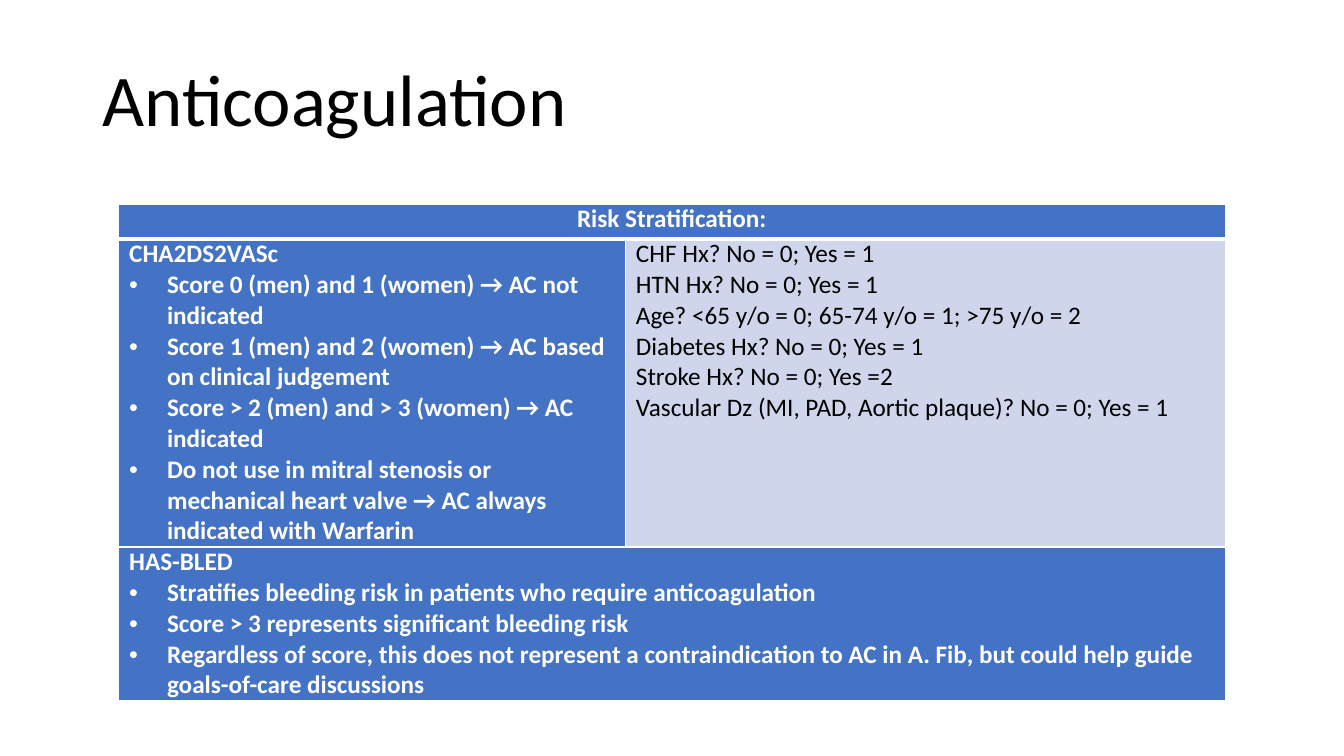
from lxml import etree
from pptx import Presentation
from pptx import util as u
from pptx.dml.color import RGBColor
from pptx.enum import text
from pptx.oxml.ns import qn

Pt = u.Pt
FONT = "Calibri"
WHITE, BLACK, BLUE, PALE = "FFFFFF", "000000", "4472C4", "CFD5EA"
INDENT = 27

HEADING = ["Risk Stratification:"]
CHADS_RULES = [
    "CHA2DS2VASc",
    "Score 0 (men) and 1 (women) → AC not indicated",
    "Score 1 (men) and 2 (women) → AC based on clinical judgement",
    "Score > 2 (men) and > 3 (women) → AC indicated",
    "Do not use in mitral stenosis or mechanical heart valve → AC always indicated with Warfarin",
]
CHADS_POINTS = [
    "CHF Hx? No = 0; Yes = 1",
    "HTN Hx? No = 0; Yes = 1",
    "Age? <65 y/o = 0; 65-74 y/o = 1; >75 y/o = 2",
    "Diabetes Hx? No = 0; Yes = 1",
    "Stroke Hx? No = 0; Yes =2",
    "Vascular Dz (MI, PAD, Aortic plaque)? No = 0; Yes = 1",
]
HAS_BLED = [
    "HAS-BLED",
    "Stratifies bleeding risk in patients who require anticoagulation",
    "Score > 3 represents significant bleeding risk",
    "Regardless of score, this does not represent a contraindication to AC in A. Fib, "
    "but could help guide goals-of-care discussions",
]


def color(value):
    return RGBColor.from_string(value)


def style_runs(para, size, ink, bold=False):
    for span in para.runs:
        span.font.name = FONT
        span.font.size = Pt(size)
        span.font.bold = bold
        span.font.color.rgb = color(ink)


def add_bullet(para):
    props = para._p.get_or_add_pPr()
    props.set("marL", str(Pt(INDENT)))
    props.set("indent", str(Pt(-INDENT)))
    etree.SubElement(props, qn("a:buFont")).set("typeface", "Arial")
    etree.SubElement(props, qn("a:buChar")).set("char", "•")


def set_borders(cell, top, bottom):
    """Draw white borders; the lines precede the fill in the cell properties."""
    props = cell._tc.get_or_add_tcPr()
    for index, (side, width) in enumerate(zip("LRTB", (1, 1, top, bottom))):
        line = etree.Element(qn(f"a:ln{side}"), w=str(Pt(width)))
        fill = etree.SubElement(line, qn("a:solidFill"))
        etree.SubElement(fill, qn("a:srgbClr")).set("val", WHITE)
        props.insert(index, line)


def fill_cell(cell, lines, ink, bold, bulleted=False, centred=False):
    cell.text_frame.text = "\n".join(lines)
    for index, para in enumerate(cell.text_frame.paragraphs):
        if centred:
            para.alignment = text.PP_ALIGN.CENTER
        if bulleted and index > 0:
            add_bullet(para)
        style_runs(para, 18, ink, bold)


def add_title(page, left, top, width, height):
    title = page.shapes.title
    title.left, title.top, title.width, title.height = map(Pt, (left, top, width, height))
    frame = title.text_frame
    frame.text = "Anticoagulation"
    frame.vertical_anchor = text.MSO_ANCHOR.MIDDLE
    frame.auto_size = text.MSO_AUTO_SIZE.NONE
    para = frame.paragraphs[0]
    para.alignment = text.PP_ALIGN.LEFT
    para.line_spacing = 0.9
    style_runs(para, 52, BLACK)


def add_risk_table(page, left, top, width, height):
    table = page.shapes.add_table(3, 2, *map(Pt, (left, top, width, height))).table
    table.first_row = table.horz_banding = False

    # Column and row sizes
    left_column, heading_row, bleeding_row = 362, 25, 109.5
    for column, size in zip(table.columns, (left_column, width - left_column)):
        column.width = Pt(size)
    middle_row = height - heading_row - bleeding_row
    for row, size in zip(table.rows, (heading_row, middle_row, bleeding_row)):
        row.height = Pt(size)

    # Full-width first and last rows
    for row in (0, 2):
        table.cell(row, 0).merge(table.cell(row, 1))

    # Fills, margins and borders
    for row in range(3):
        for column in range(2):
            cell = table.cell(row, column)
            cell.margin_left = cell.margin_right = Pt(7.7)
            cell.margin_top = cell.margin_bottom = 0
            cell.fill.solid()
            cell.fill.fore_color.rgb = color(PALE if (row, column) == (1, 1) else BLUE)
            set_borders(cell, top=3 if row == 1 else 1, bottom=3 if row == 0 else 1)

    # Cell text
    fill_cell(table.cell(0, 0), HEADING, WHITE, True, centred=True)
    fill_cell(table.cell(1, 0), CHADS_RULES, WHITE, True, bulleted=True)
    fill_cell(table.cell(1, 1), CHADS_POINTS, BLACK, False)
    fill_cell(table.cell(2, 0), HAS_BLED, WHITE, True, bulleted=True)


def main():
    deck = Presentation()
    deck.slide_width, deck.slide_height = Pt(960), Pt(540)
    page = deck.slides.add_slide(deck.slide_layouts.get_by_name("Title Only"))
    page.background.fill.solid()
    page.background.fill.fore_color.rgb = color(WHITE)
    add_title(page, 66, 14.4, 828, 118.8)
    add_risk_table(page, 84.6, 145.7, 790.5, 354.5)
    deck.save("out.pptx")


if __name__ == "__main__":
    main()
